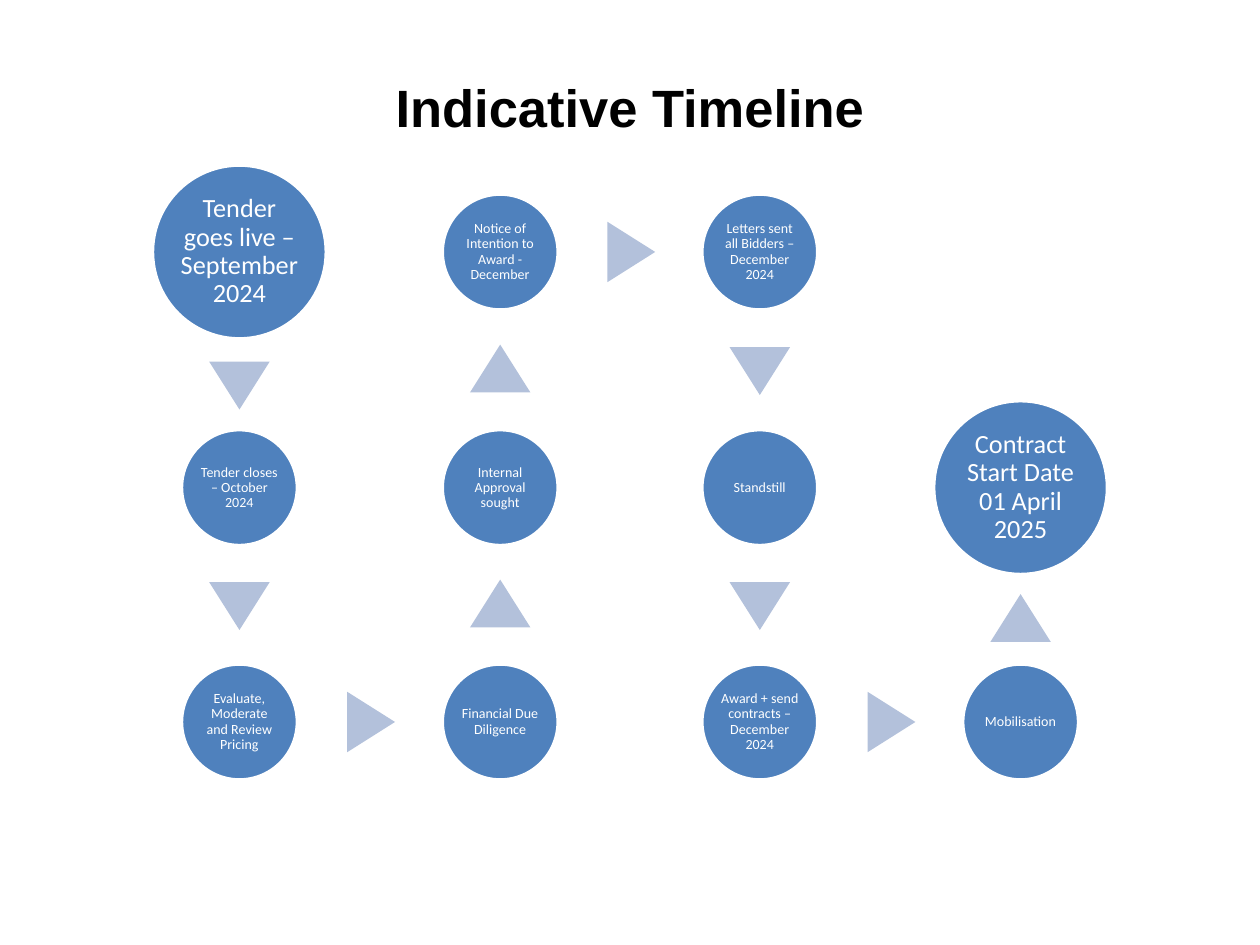
from pptx import Presentation
from pptx.dml.color import RGBColor
from pptx.enum.shapes import MSO_SHAPE
from pptx.enum.text import MSO_ANCHOR, PP_ALIGN
from pptx.util import Inches, Pt

OVAL, TRIANGLE = MSO_SHAPE.OVAL, MSO_SHAPE.ISOSCELES_TRIANGLE
MIDDLE, CENTER = MSO_ANCHOR.MIDDLE, PP_ALIGN.CENTER

TITLE = "Indicative Timeline"
STEPS = [
    ("Tender goes live – September 2024", 0, 0, "large"),
    ("Tender closes – October 2024", 0, 1, "small"),
    ("Evaluate, Moderate and Review Pricing", 0, 2, "small"),
    ("Financial Due Diligence", 1, 2, "small"),
    ("Internal Approval sought", 1, 1, "small"),
    ("Notice of Intention to Award - December", 1, 0, "small"),
    ("Letters sent all Bidders – December 2024", 2, 0, "small"),
    ("Standstill", 2, 1, "small"),
    ("Award + send contracts – December 2024", 2, 2, "small"),
    ("Mobilisation", 3, 2, "small"),
    ("Contract Start Date 01 April 2025", 3, 1, "large"),
]
SIZES = {
    "large": {"diameter": 1.38, "inset": 0.02, "font": 15},
    "small": {"diameter": 0.92, "inset": 0.01, "font": 8},
}
COLUMNS = [1.9, 3.97, 6.03, 8.1]
ROWS = [2.0, 3.87, 5.73]
ROTATIONS = {(0, -1): 0, (1, 0): 90, (0, 1): 180}
ARROW_WIDTH, ARROW_HEIGHT, ARROW_SHIFT = 0.48, 0.38, 0.01


def color(value):
    return RGBColor.from_string(value)


def apply(target, values):
    for name, value in values.items():
        setattr(target, name, value)


def write(shape, text, inset, line_spacing, font):
    frame = shape.text_frame
    margins = {f"margin_{side}": Inches(inset) for side in ("left", "right", "top", "bottom")}
    apply(frame, {"text": text, "word_wrap": True, "vertical_anchor": MIDDLE, **margins})
    para = frame.paragraphs[0]
    apply(para, {"alignment": CENTER, "line_spacing": line_spacing})
    name, size, bold, text_color = font
    apply(para.font, {"name": name, "size": Pt(size), "bold": bold})
    para.font.color.rgb = color(text_color)


def add_filled(slide, kind, center_x, center_y, width, height, fill):
    shape = slide.shapes.add_shape(
        kind, Inches(center_x - width / 2), Inches(center_y - height / 2), Inches(width), Inches(height)
    )
    shape.shadow.inherit = False
    shape.fill.solid()
    shape.fill.fore_color.rgb = color(fill)
    return shape


def add_step(slide, text, column, row, size):
    style = SIZES[size]
    diameter = style["diameter"]
    circle = add_filled(slide, OVAL, COLUMNS[column], ROWS[row], diameter, diameter, "4F81BD")
    circle.line.color.rgb = color("FFFFFF")
    circle.line.width = Pt(2)
    write(circle, text, style["inset"], 0.9, ("Calibri", style["font"], False, "FFFFFF"))


def add_arrow(slide, start, end):
    _, start_column, start_row, start_size = start
    _, end_column, end_row, end_size = end
    direction = (end_column - start_column, end_row - start_row)
    edge_shift = (SIZES[start_size]["diameter"] - SIZES[end_size]["diameter"]) / 4
    shift = edge_shift + ARROW_SHIFT
    center_x = (COLUMNS[start_column] + COLUMNS[end_column]) / 2 + direction[0] * shift
    center_y = (ROWS[start_row] + ROWS[end_row]) / 2 + direction[1] * shift
    arrow = add_filled(slide, TRIANGLE, center_x, center_y, ARROW_WIDTH, ARROW_HEIGHT, "B3C1DB")
    arrow.line.fill.background()
    arrow.rotation = ROTATIONS[direction]


def main():
    deck = Presentation()
    apply(deck, {"slide_width": Inches(10), "slide_height": Inches(7.5)})
    slide = deck.slides.add_slide(deck.slide_layouts[5])

    title = slide.shapes.title
    apply(title, {"left": Inches(0.5), "top": Inches(0.5), "width": Inches(9), "height": Inches(0.69)})
    write(title, TITLE, 0.05, 1.0, ("Arial", 30, True, "000000"))

    for step in STEPS:
        add_step(slide, *step)
    for start, end in zip(STEPS, STEPS[1:]):
        add_arrow(slide, start, end)

    deck.save("out.pptx")


if __name__ == "__main__":
    main()
